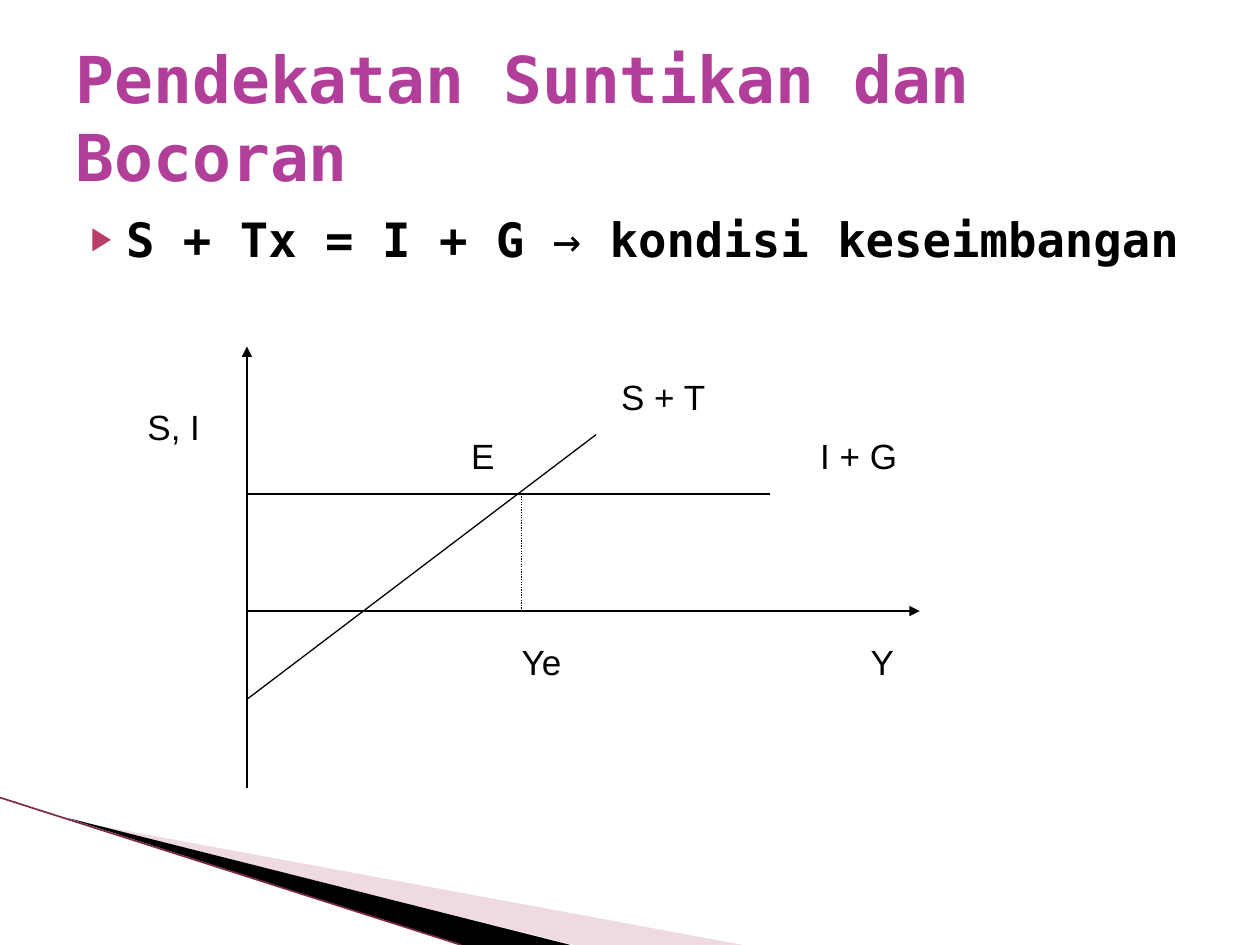
"""Build the slide on the injection and leakage approach to equilibrium."""
from lxml import etree
from pptx import Presentation, util as u
from pptx.dml.color import RGBColor
from pptx.enum import dml, shapes, text
from pptx.oxml import ns

BLACK = RGBColor(0, 0, 0)
PURPLE = RGBColor(0xB1, 0x3F, 0x9A)
PINK = RGBColor(0xD8, 0xA3, 0xAF)
WINE = RGBColor(0x7F, 0x2A, 0x45)
MONO = "DejaVu Sans Mono"

TITLE = "Pendekatan Suntikan dan Bocoran"
BODY = [("S + Tx = I + G ", True), ("→ ", False), ("kondisi keseimbangan", True)]
LEFT, AXIS, LEVEL, EQUAL = 1.96, 4.85, 3.92, 4.14
LINES = [
    ((LEFT, 6.25), (LEFT, 2.75), "arrow"),
    ((LEFT, LEVEL), (6.11, LEVEL), "plain"),
    ((LEFT, AXIS), (7.3, AXIS), "arrow"),
    ((LEFT, 5.55), (4.73, 3.45), "plain"),
    ((EQUAL, LEVEL), (EQUAL, AXIS), "dots"),
]
LABELS = [
    ("S + T", 4.93, 2.98, 0.99),
    ("I + G", 6.51, 3.45, 0.99),
    ("S, I", 1.17, 3.22, 0.79),
    ("E", 3.74, 3.45, 0.4),
    ("Ye", EQUAL, 5.08, 0.59),
    ("Y", 6.91, 5.08, 0.4),
]
WEDGES = [
    ([(0.55, 6.51), (5.9, 7.5), (4.56, 7.5)], PINK, 40),
    ([(0.53, 6.49), (4.53, 7.5), (3.66, 7.5)], BLACK, 100),
]
EDGE = ((0, 6.33), (3.66, 7.5))


def apply(obj, form):
    for key, val in form.items():
        setattr(obj, key, val)


def add_xml(node, tag, **attrs):
    return etree.SubElement(node, ns.qn(tag), attrs)


def style(font, name, size, color, bold=False):
    apply(font, dict(name=name, size=u.Pt(size), bold=bold))
    font.color.rgb = color


def place(shape, left, top, width, height):
    apply(shape, dict(left=u.Inches(left), top=u.Inches(top),
                      width=u.Inches(width), height=u.Inches(height)))


def draw_wedge(slide, points, color, alpha):
    spots = [(u.Inches(x), u.Inches(y)) for x, y in points]
    build = slide.shapes.build_freeform(*spots[0])
    build.add_line_segments(spots[1:], close=True)
    wedge = build.convert_to_shape()
    wedge.shadow.inherit = False
    wedge.fill.solid()
    wedge.fill.fore_color.rgb = color
    wedge.line.fill.background()
    if alpha < 100:
        tint = wedge.fill._xPr.find(".//" + ns.qn("a:srgbClr"))
        add_xml(tint, "a:alpha", val=str(alpha * 1000))


def draw_line(slide, start, end, kind="plain", color=BLACK, width=0.75):
    ends = [u.Inches(n) for n in start + end]
    link = slide.shapes.add_connector(shapes.MSO_CONNECTOR.STRAIGHT, *ends)
    link.line.color.rgb = color
    link.line.width = u.Pt(width)
    if kind == "dots":
        link.line.dash_style = dml.MSO_LINE.ROUND_DOT
    if kind == "arrow":
        add_xml(link.line._get_or_add_ln(), "a:tailEnd", type="triangle")
    add_xml(link._element.spPr, "a:effectLst")


def fill_title(title):
    place(title, 0.5, 0.3, 9, 1.25)
    title.text = TITLE
    apply(title.text_frame, dict(word_wrap=True, auto_size=text.MSO_AUTO_SIZE.NONE,
                                 vertical_anchor=text.MSO_ANCHOR.MIDDLE))
    para = title.text_frame.paragraphs[0]
    para.alignment = text.PP_ALIGN.LEFT
    style(para.runs[0].font, MONO, 36.9, PURPLE, True)


def fill_body(body):
    place(body, 0.5, 1.62, 9, 0.8)
    apply(body.text_frame, dict(word_wrap=True, auto_size=text.MSO_AUTO_SIZE.NONE))
    para = body.text_frame.paragraphs[0]
    para.space_before = u.Pt(0)
    props = para._p.get_or_add_pPr()
    props.set("marL", str(u.Inches(0.4)))
    props.set("indent", str(u.Inches(-0.28)))
    add_xml(add_xml(props, "a:buClr"), "a:srgbClr", val="B83D68")
    add_xml(props, "a:buSzPct", val="68000")
    add_xml(props, "a:buChar", char="▶")
    for words, bold in BODY:
        run = para.add_run()
        run.text = words
        style(run.font, MONO, 27, BLACK, bold)


def add_label(slide, words, left, top, width):
    box = slide.shapes.add_textbox(*map(u.Inches, (left, top, width, 0.47)))
    apply(box.text_frame, dict(word_wrap=True, margin_left=0, margin_right=0,
                               margin_top=0, margin_bottom=0))
    para = box.text_frame.paragraphs[0]
    para.text = words
    para.space_after = u.Pt(10)
    style(para.runs[0].font, "Arial", 20, BLACK)


def main():
    deck = Presentation()
    apply(deck, dict(slide_width=u.Inches(10), slide_height=u.Inches(7.5)))
    slide = deck.slides.add_slide(deck.slide_layouts[1])
    for wedge in WEDGES:
        draw_wedge(slide, *wedge)
    draw_line(slide, *EDGE, color=WINE, width=0.95)
    fill_title(slide.shapes.title)
    fill_body(slide.placeholders[1])
    for line in LINES:
        draw_line(slide, *line)
    for label in LABELS:
        add_label(slide, *label)
    deck.save("out.pptx")


if __name__ == "__main__":
    main()
